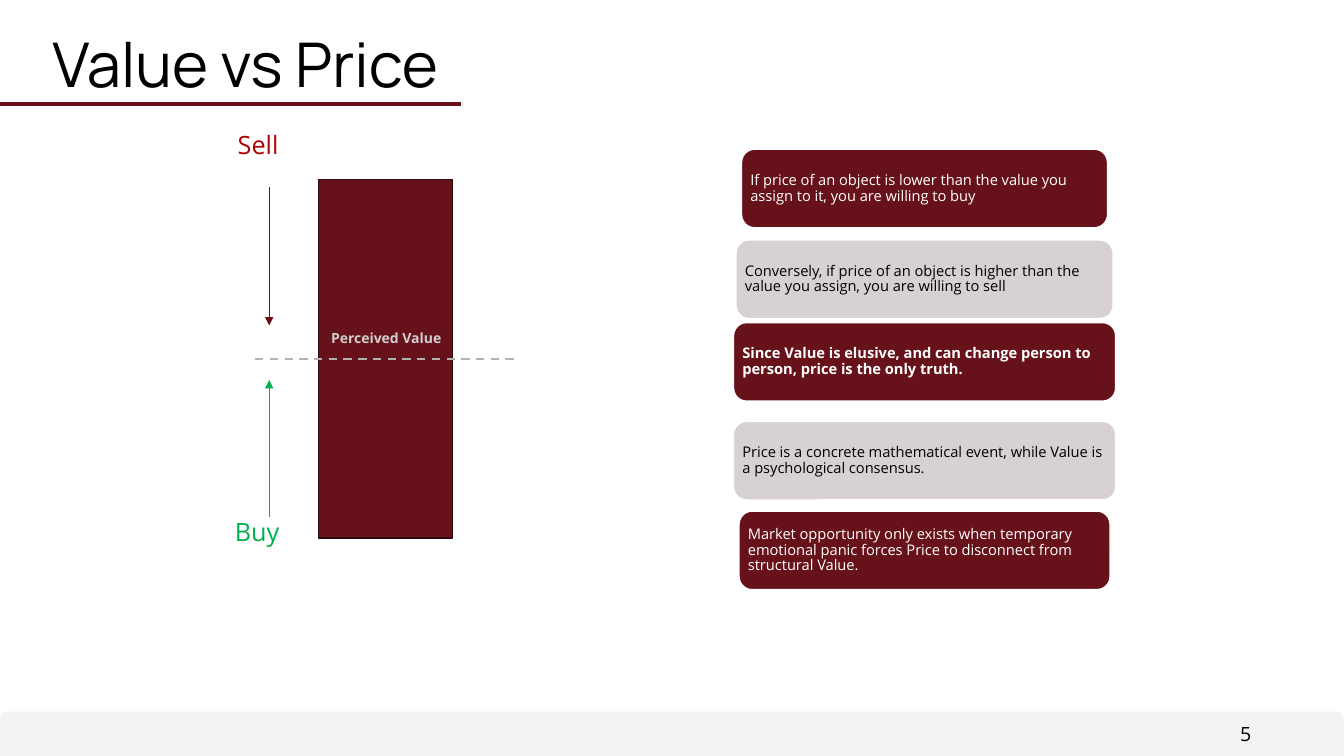
from dataclasses import dataclass
from typing import Optional

from pptx import Presentation
from pptx.dml.color import RGBColor
from pptx.enum.dml import MSO_LINE
from pptx.enum.shapes import MSO_CONNECTOR, MSO_SHAPE
from pptx.enum.text import MSO_ANCHOR, PP_ALIGN
from pptx.oxml.ns import qn
from pptx.util import Inches, Pt
from lxml.etree import SubElement


@dataclass(frozen=True)
class Theme:
    heading_font: str = "Manrope"
    body_font: str = "Open Sans"
    maroon: str = "67121B"
    dark_maroon: str = "2D080C"
    pale: str = "D7D1D1"
    band: str = "F2F2F2"
    dash: str = "B2B2B2"
    value_text: str = "D0CECE"
    sell: str = "B40000"
    buy: str = "00B050"
    black: str = "000000"
    white: str = "FFFFFF"
    title_size: float = 44
    label_size: float = 18
    number_size: float = 14
    card_size: float = 10.5
    value_size: float = 10


@dataclass(frozen=True)
class Box:
    left: float
    top: float
    width: float
    height: float

    def lengths(self):
        return [Inches(n) for n in (self.left, self.top, self.width, self.height)]


@dataclass(frozen=True)
class Label:
    text: str
    box: Box
    size: float
    color: str
    align: PP_ALIGN = PP_ALIGN.LEFT
    bold: bool = False
    wrap: bool = True


@dataclass(frozen=True)
class Rule:
    start: tuple
    end: tuple
    color: str
    weight: float
    dashed: bool = False
    arrow: bool = False


@dataclass(frozen=True)
class Card:
    text: str
    top: float
    width: float
    bold: bool = False


THEME = Theme()
CARD_CENTER = 9.17
CARD_HEIGHT = 0.78
ARROW_X = 2.67

RULES = [
    Rule((0, 1.03), (4.57, 1.03), THEME.maroon, 3),
    Rule((2.53, 3.56), (5.12, 3.56), THEME.dash, 1.5, dashed=True),
    Rule((ARROW_X, 5.13), (ARROW_X, 3.77), THEME.buy, 0.5, arrow=True),
    Rule((ARROW_X, 1.86), (ARROW_X, 3.23), THEME.maroon, 0.5, arrow=True),
]
LABELS = [
    Label("5", Box(10.82, 7.11, 1.69, 0.34), THEME.number_size, THEME.black, PP_ALIGN.RIGHT),
    Label("Perceived Value", Box(2.89, 3.22, 1.88, 0.27), THEME.value_size,
          THEME.value_text, PP_ALIGN.CENTER, bold=True),
    Label("Sell", Box(2.26, 1.23, 0.77, 0.49), THEME.label_size, THEME.sell, wrap=False),
    Label("Buy", Box(2.23, 5.07, 0.82, 0.49), THEME.label_size, THEME.buy, wrap=False),
]
CARDS = [
    Card("If price of an object is lower than the value you assign to it, "
         "you are willing to buy", 1.48, 3.63),
    Card("Conversely, if price of an object is higher than the value you assign, "
         "you are willing to sell", 2.38, 3.74),
    Card("Since Value is elusive, and can change person to person, "
         "price is the only truth.", 3.2, 3.79, bold=True),
    Card("Price is a concrete mathematical event, "
         "while Value is a psychological consensus.", 4.18, 3.79),
    Card("Market opportunity only exists when temporary emotional panic forces "
         "Price to disconnect from structural Value.", 5.07, 3.68),
]


def set_font(paragraph, name: str, size: float, color: str, bold: bool = False) -> None:
    paragraph.font.name = name
    paragraph.font.size = Pt(size)
    paragraph.font.bold = bold
    paragraph.font.color.rgb = RGBColor.from_string(color)


def set_insets(frame, horizontal: float, vertical: float) -> None:
    frame.margin_left = frame.margin_right = Inches(horizontal)
    frame.margin_top = frame.margin_bottom = Inches(vertical)


def add_block(slide, kind: MSO_SHAPE, box: Box, fill: str, line: Optional[str] = None):
    shape = slide.shapes.add_shape(kind, *box.lengths())
    shape.shadow.inherit = False
    shape.fill.solid()
    shape.fill.fore_color.rgb = RGBColor.from_string(fill)
    if line:
        shape.line.color.rgb = RGBColor.from_string(line)
        shape.line.width = Pt(1)
    else:
        shape.line.fill.background()
    return shape


def add_rule(slide, rule: Rule) -> None:
    points = [Inches(n) for n in (*rule.start, *rule.end)]
    connector = slide.shapes.add_connector(MSO_CONNECTOR.STRAIGHT, *points)
    connector.line.color.rgb = RGBColor.from_string(rule.color)
    connector.line.width = Pt(rule.weight)
    if rule.dashed:
        connector.line.dash_style = MSO_LINE.DASH
    if rule.arrow:
        SubElement(connector.line._get_or_add_ln(), qn("a:tailEnd"), type="triangle")
    SubElement(connector._element.spPr, qn("a:effectLst"))


def add_label(slide, label: Label) -> None:
    frame = slide.shapes.add_textbox(*label.box.lengths()).text_frame
    frame.word_wrap = label.wrap
    paragraph = frame.paragraphs[0]
    paragraph.text = label.text
    paragraph.alignment = label.align
    set_font(paragraph, THEME.body_font, label.size, label.color, label.bold)


def add_card(slide, card: Card, fill: str, color: str) -> None:
    box = Box(CARD_CENTER - card.width / 2, card.top, card.width, CARD_HEIGHT)
    frame = add_block(slide, MSO_SHAPE.ROUNDED_RECTANGLE, box, fill, THEME.white).text_frame
    frame.word_wrap = True
    frame.vertical_anchor = MSO_ANCHOR.MIDDLE
    set_insets(frame, 0.05, 0.05)
    paragraph = frame.paragraphs[0]
    paragraph.text = card.text
    paragraph.alignment = PP_ALIGN.LEFT
    paragraph.line_spacing = 0.9
    set_font(paragraph, THEME.body_font, THEME.card_size, color, card.bold)


def set_title(slide, text: str) -> None:
    title = slide.shapes.title
    title.left, title.top, title.width, title.height = Box(0.45, 0.2, 12.42, 0.84).lengths()
    frame = title.text_frame
    frame.vertical_anchor = MSO_ANCHOR.BOTTOM
    set_insets(frame, 0.07, 0.04)
    paragraph = frame.paragraphs[0]
    paragraph.text = text
    paragraph.alignment = PP_ALIGN.LEFT
    paragraph.line_spacing = 0.9
    set_font(paragraph, THEME.heading_font, THEME.title_size, THEME.black)


def main() -> None:
    presentation = Presentation()
    presentation.slide_width = Inches(13.33)
    presentation.slide_height = Inches(7.5)
    slide = presentation.slides.add_slide(presentation.slide_layouts[5])
    set_title(slide, "Value vs Price")

    # Footer band and value bar
    add_block(slide, MSO_SHAPE.ROUND_2_SAME_RECTANGLE, Box(0, 7.06, 13.33, 0.44), THEME.band)
    add_block(slide, MSO_SHAPE.RECTANGLE, Box(3.16, 1.78, 1.33, 3.56),
              THEME.maroon, THEME.dark_maroon)

    # Title rule, value line, arrows and their labels
    for rule in RULES:
        add_rule(slide, rule)
    for label in LABELS:
        add_label(slide, label)

    # Statement cards in alternating colours
    styles = [(THEME.maroon, THEME.white), (THEME.pale, THEME.black)]
    for index, card in enumerate(CARDS):
        add_card(slide, card, *styles[index % 2])

    presentation.save("out.pptx")


if __name__ == "__main__":
    main()
